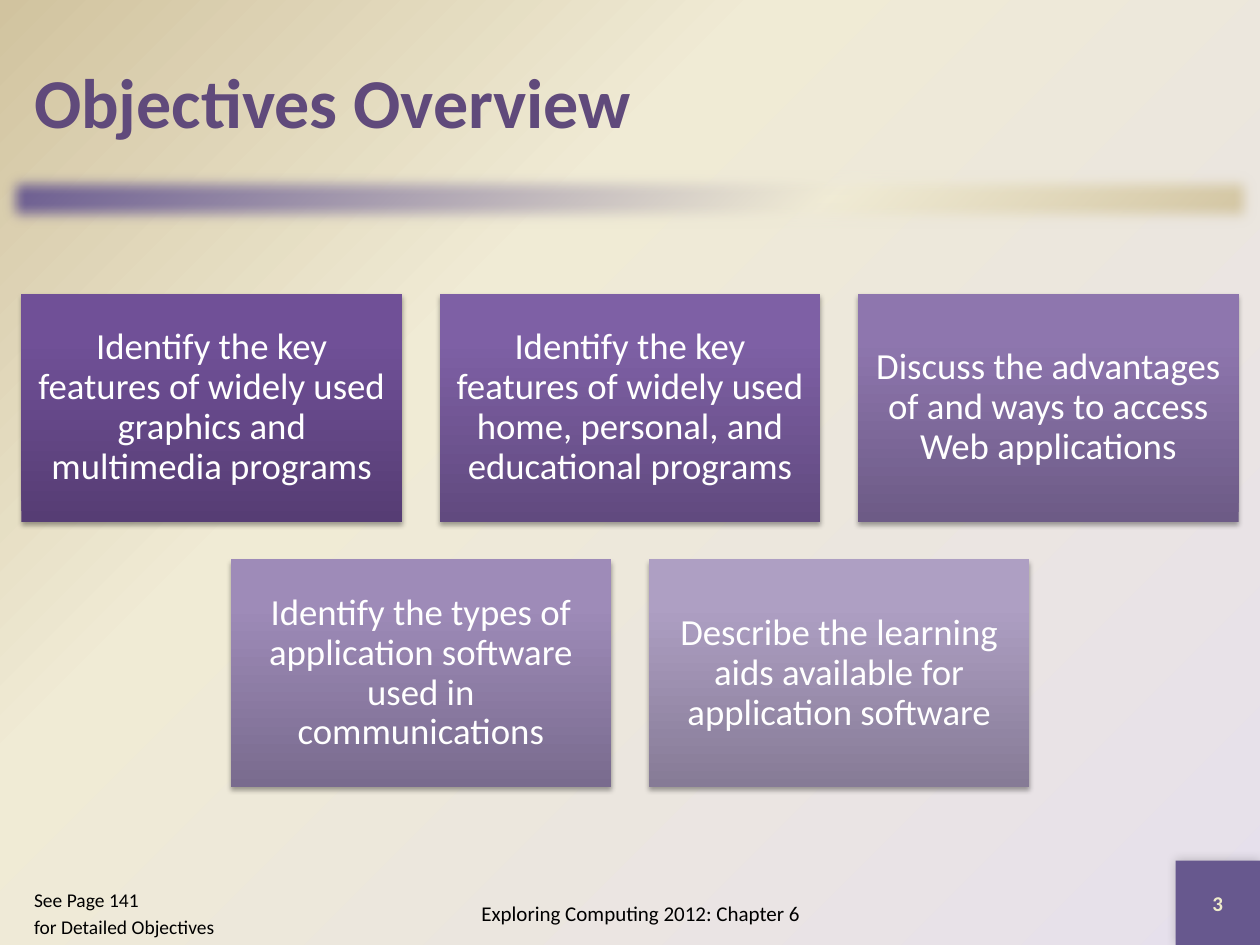
from dataclasses import dataclass

from lxml.etree import SubElement
from pptx import Presentation
from pptx.dml.color import RGBColor
from pptx.enum.shapes import MSO_SHAPE
from pptx.enum.text import MSO_ANCHOR, MSO_AUTO_SIZE, PP_ALIGN
from pptx.oxml import parse_xml
from pptx.oxml.ns import nsdecls, qn
from pptx.util import Inches, Pt

FONT = "Calibri"
WHITE = RGBColor(0xFF, 0xFF, 0xFF)
BLACK = RGBColor(0x00, 0x00, 0x00)
PURPLE = RGBColor(0x67, 0x58, 0x8E)
PLUM = RGBColor(0x60, 0x4A, 0x7B)
LILAC = RGBColor(0xE6, 0xE0, 0xEC)
CREAM = RGBColor(0xF0, 0xEB, 0xD5)
SAND = RGBColor(0xD1, 0xC3, 0x9F)
PALE = RGBColor(0xEE, 0xEB, 0xCA)

# Tile grid, in inches
WIDE, HIGH, GAP, TOP = 3.02, 1.81, 0.3, 2.33


@dataclass
class Tile:
    text: str
    low: RGBColor
    mid: RGBColor
    high: RGBColor


ROWS = [
    [
        Tile("Identify the key features of widely used graphics and multimedia programs",
             RGBColor(0x56, 0x3D, 0x74), RGBColor(0x70, 0x50, 0x97), RGBColor(0x70, 0x4F, 0x99)),
        Tile("Identify the key features of widely used home, personal, and educational programs",
             RGBColor(0x61, 0x4A, 0x7F), RGBColor(0x7E, 0x60, 0xA5), RGBColor(0x7F, 0x60, 0xA7)),
        Tile("Discuss the advantages of and ways to access Web applications",
             RGBColor(0x6D, 0x5B, 0x86), RGBColor(0x8E, 0x76, 0xAE), RGBColor(0x8E, 0x75, 0xB0)),
    ],
    [
        Tile("Identify the types of application software used in communications",
             RGBColor(0x79, 0x6B, 0x8E), RGBColor(0x9E, 0x8B, 0xB8), RGBColor(0x9E, 0x8B, 0xBA)),
        Tile("Describe the learning aids available for application software",
             RGBColor(0x86, 0x7B, 0x96), RGBColor(0xAE, 0x9F, 0xC3), RGBColor(0xAE, 0x9F, 0xC4)),
    ],
]

CORNER = '<a:path path="circle"><a:fillToRect l="100000" t="100000"/></a:path>'


def blend(stops: list, shade: str):
    """Make a gradient fill from (percent, colour) stops."""
    marks = "".join(f'<a:gs pos="{pos * 1000}"><a:srgbClr val="{tone}"/></a:gs>'
                    for pos, tone in stops)
    return parse_xml(f'<a:gradFill {nsdecls("a")} rotWithShape="1">'
                     f'<a:gsLst>{marks}</a:gsLst>{shade}</a:gradFill>')


def slant(angle: int) -> str:
    return f'<a:lin ang="{angle * 60000}" scaled="0"/>'


def place(shape, left: float, top: float, width: float, height: float) -> None:
    shape.left, shape.top = Inches(left), Inches(top)
    shape.width, shape.height = Inches(width), Inches(height)


def add_box(slide, left: float, top: float, width: float, height: float):
    box = slide.shapes.add_shape(MSO_SHAPE.RECTANGLE, Inches(left), Inches(top),
                                 Inches(width), Inches(height))
    box.line.fill.background()
    box.shadow.inherit = False
    return box


def fill_blend(box, stops: list, angle: int) -> None:
    geom = box._element.spPr.find(qn("a:prstGeom"))
    geom.addnext(blend(stops, slant(angle)))


def add_effect(box, name: str, **attrs: str):
    effects = box._element.spPr.find(qn("a:effectLst"))
    return SubElement(effects, qn(name), attrs)


def cast(box, alpha: int, blur: float, dist: float, angle: int) -> None:
    """Give a box an outer shadow."""
    shade = add_effect(box, "a:outerShdw", blurRad=str(Pt(blur)), dist=str(Pt(dist)),
                       dir=str(angle * 60000), rotWithShape="0")
    tone = SubElement(shade, qn("a:srgbClr"), val=str(BLACK))
    SubElement(tone, qn("a:alpha"), val=str(alpha * 1000))


def style(para, size: float, tone: RGBColor, align=PP_ALIGN.CENTER, bold: bool = False) -> None:
    para.alignment = align
    font = para.font
    font.name, font.size, font.bold = FONT, Pt(size), bold
    font.color.rgb = tone


def set_text(shape, text: str, size: float, tone: RGBColor, **extra) -> None:
    frame = shape.text_frame
    frame.word_wrap = True
    frame.auto_size = MSO_AUTO_SIZE.NONE
    frame.vertical_anchor = MSO_ANCHOR.MIDDLE
    frame.text = text
    for para in frame.paragraphs:
        style(para, size, tone, **extra)


def add_tile(slide, tile: Tile, left: float, top: float) -> None:
    box = add_box(slide, left, top, WIDE, HIGH)
    fill_blend(box, [(0, tile.low), (80, tile.mid), (100, tile.high)], 270)
    cast(box, 35, 3.1, 1.8, 90)
    set_text(box, tile.text, 21, WHITE)
    frame = box.text_frame
    frame.margin_left = frame.margin_right = Inches(0.09)
    frame.margin_top = frame.margin_bottom = Inches(0.09)
    frame.paragraphs[0].line_spacing = 0.9


def main() -> None:
    deck = Presentation()
    deck.slide_width, deck.slide_height = Inches(10), Inches(7.5)
    slide = deck.slides.add_slide(deck.slide_layouts[1])

    # Background
    slide.background.fill.solid()
    ground = slide._element.find(".//" + qn("p:bgPr"))
    ground[0] = blend([(0, LILAC), (65, CREAM), (100, SAND)], CORNER)

    # Soft bar under the title
    bar = add_box(slide, 0, 1.33, 10, 0.5)
    fill_blend(bar, [(0, PURPLE), (65, CREAM), (100, SAND)], 45)
    add_effect(bar, "a:softEdge", rad="112500")

    # Title
    title = slide.shapes.title
    place(title, 0.17, 0.17, 9.67, 1.25)
    set_text(title, "Objectives Overview", 40, PLUM, align=PP_ALIGN.LEFT, bold=True)

    # Tiles, each row centred on the slide
    for line, row in enumerate(ROWS):
        start = (10 - len(row) * (WIDE + GAP) + GAP) / 2
        for col, tile in enumerate(row):
            add_tile(slide, tile, start + col * (WIDE + GAP), TOP + line * (HIGH + GAP))

    # Footer
    foot = slide.shapes.add_textbox(Inches(3), Inches(7), Inches(4.17), Inches(0.5))
    set_text(foot, "Exploring Computing 2012: Chapter 6", 12, BLACK)

    # Page number
    page = add_box(slide, 9.33, 6.83, 0.67, 0.67)
    page.fill.solid()
    page.fill.fore_color.rgb = PURPLE
    cast(page, 20, 6, 0, 225)
    set_text(page, "3", 12, PALE, bold=True)

    # Page reference
    note = slide.placeholders[1]
    place(note, 0.17, 7, 1.83, 0.5)
    set_text(note, "See Page 141\nfor Detailed Objectives", 11.1, BLACK, align=PP_ALIGN.LEFT)
    note.text_frame.vertical_anchor = MSO_ANCHOR.TOP
    for para in note.text_frame.paragraphs:
        props = para._p.get_or_add_pPr()
        props.set("marL", str(Inches(0.38)))
        props.set("indent", str(Inches(-0.38)))
        props.insert(0, parse_xml(f'<a:buNone {nsdecls("a")}/>'))

    deck.save("out.pptx")


if __name__ == "__main__":
    main()
